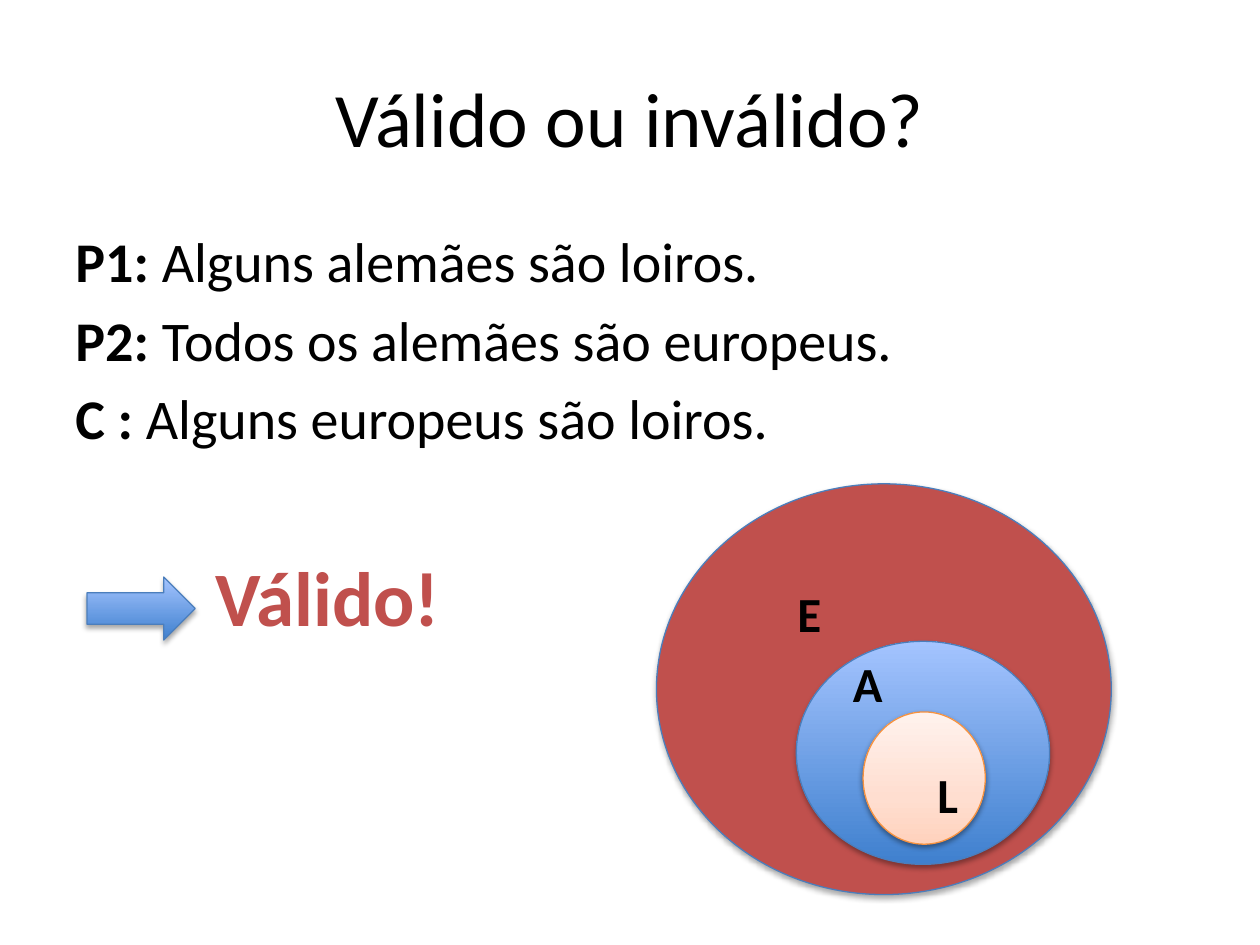
from dataclasses import dataclass

from lxml import etree
from pptx import Presentation
from pptx import util as u
from pptx.dml.color import RGBColor
from pptx.enum import shapes, text
from pptx.oxml import parse_xml
from pptx.oxml.ns import nsdecls, qn

COLORS = {
    "black": "000000",
    "red": "C0504D",
    "blue_line": "4B7EBC",
    "orange_line": "F69240",
}
BLUE_STOPS = ((0, "3F80CE"), (100, "A4C4FF"))
PEACH_STOPS = ((0, "FFD2BD"), (35, "FFDED0"), (100, "FFF2ED"))
FONT = "Calibri"


@dataclass(frozen=True)
class Figure:
    preset: shapes.MSO_SHAPE
    box: tuple
    stops: tuple = BLUE_STOPS
    line: str = "blue_line"
    shadow_alpha: int = 35
    shadow_distance: float = 1.8


@dataclass(frozen=True)
class Label:
    letter: str
    box: tuple


FIGURES = (
    Figure(shapes.MSO_SHAPE.OVAL, (5.21, 3.84, 3.61, 3.26), ((0, COLORS["red"]),)),
    Figure(shapes.MSO_SHAPE.OVAL, (6.32, 5.09, 2.01, 1.77)),
    Figure(shapes.MSO_SHAPE.OVAL, (6.85, 5.65, 0.97, 1.05), PEACH_STOPS, "orange_line", 38, 1.6),
    Figure(shapes.MSO_SHAPE.RIGHT_ARROW, (0.69, 4.58, 0.86, 0.5)),
)
LABELS = (
    Label("E", (6.23, 4.58, 0.44, 0.57)),
    Label("A", (6.67, 5.14, 0.44, 0.57)),
    Label("L", (7.34, 6.02, 0.65, 0.57)),
)
ARGUMENT = (
    ("P1: ", "Alguns alemães são loiros."),
    ("P2: ", "Todos os alemães são europeus."),
    ("C : ", "Alguns europeus são loiros."),
)


def add_text(slide, paragraphs, box, *, size, color="black", bold=False,
             align=text.PP_ALIGN.LEFT, anchor=text.MSO_ANCHOR.TOP, space_before=0):
    shape = slide.shapes.add_textbox(*map(u.Inches, box))
    frame = shape.text_frame
    frame.word_wrap = True
    frame.vertical_anchor = anchor
    for index, runs in enumerate(paragraphs):
        paragraph = frame.paragraphs[0] if index == 0 else frame.add_paragraph()
        paragraph.alignment = align
        paragraph.space_before = u.Pt(space_before if index else 0)
        for position, content in enumerate(runs):
            run = paragraph.add_run()
            run.text = content
            run.font.name = FONT
            run.font.size = u.Pt(size)
            run.font.bold = bold or (len(runs) > 1 and position == 0)
            run.font.color.rgb = RGBColor.from_string(COLORS[color])
    return shape


def set_gradient(shape, stops: tuple) -> None:
    shape.fill.background()
    entries = "".join(
        f'<a:gs pos="{position * 1000}"><a:srgbClr val="{color}"/></a:gs>'
        for position, color in stops
    )
    gradient = parse_xml(
        f'<a:gradFill {nsdecls("a")} rotWithShape="1"><a:gsLst>{entries}</a:gsLst>'
        '<a:lin ang="16200000" scaled="0"/></a:gradFill>'
    )
    properties = shape._element.spPr
    properties.replace(properties.find(qn("a:noFill")), gradient)


def set_shadow(shape, alpha: int, distance: float) -> None:
    shape.shadow.inherit = False
    effects = shape._element.spPr.find(qn("a:effectLst"))
    shadow = etree.SubElement(
        effects, qn("a:outerShdw"), blurRad=str(u.Pt(3.1)), dist=str(u.Pt(distance)),
        dir="5400000", rotWithShape="0",
    )
    color = etree.SubElement(shadow, qn("a:srgbClr"), val=COLORS["black"])
    etree.SubElement(color, qn("a:alpha"), val=str(alpha * 1000))


def add_figure(slide, figure: Figure) -> None:
    shape = slide.shapes.add_shape(figure.preset, *map(u.Inches, figure.box))
    if len(figure.stops) == 1:
        shape.fill.solid()
        shape.fill.fore_color.rgb = RGBColor.from_string(figure.stops[0][1])
    else:
        set_gradient(shape, figure.stops)
    shape.line.color.rgb = RGBColor.from_string(COLORS[figure.line])
    shape.line.width = u.Pt(0.75)
    set_shadow(shape, figure.shadow_alpha, figure.shadow_distance)


def main() -> None:
    presentation = Presentation()
    presentation.slide_width = u.Inches(10)
    presentation.slide_height = u.Inches(7.5)
    slide = presentation.slides.add_slide(presentation.slide_layouts[6])

    add_text(slide, [["Válido ou inválido?"]], (0.5, 0.3, 9, 1.25), size=44,
             align=text.PP_ALIGN.CENTER, anchor=text.MSO_ANCHOR.MIDDLE)
    add_text(slide, ARGUMENT, (0.5, 1.75, 9, 2), size=32,
             align=text.PP_ALIGN.JUSTIFY, space_before=6.4)
    add_text(slide, [["Válido!"]], (1.61, 4.31, 3, 0.85), size=44, color="red", bold=True)
    for figure in FIGURES:
        add_figure(slide, figure)
    for label in LABELS:
        add_text(slide, [[label.letter]], label.box, size=28, bold=True)

    presentation.save("out.pptx")


if __name__ == "__main__":
    main()
